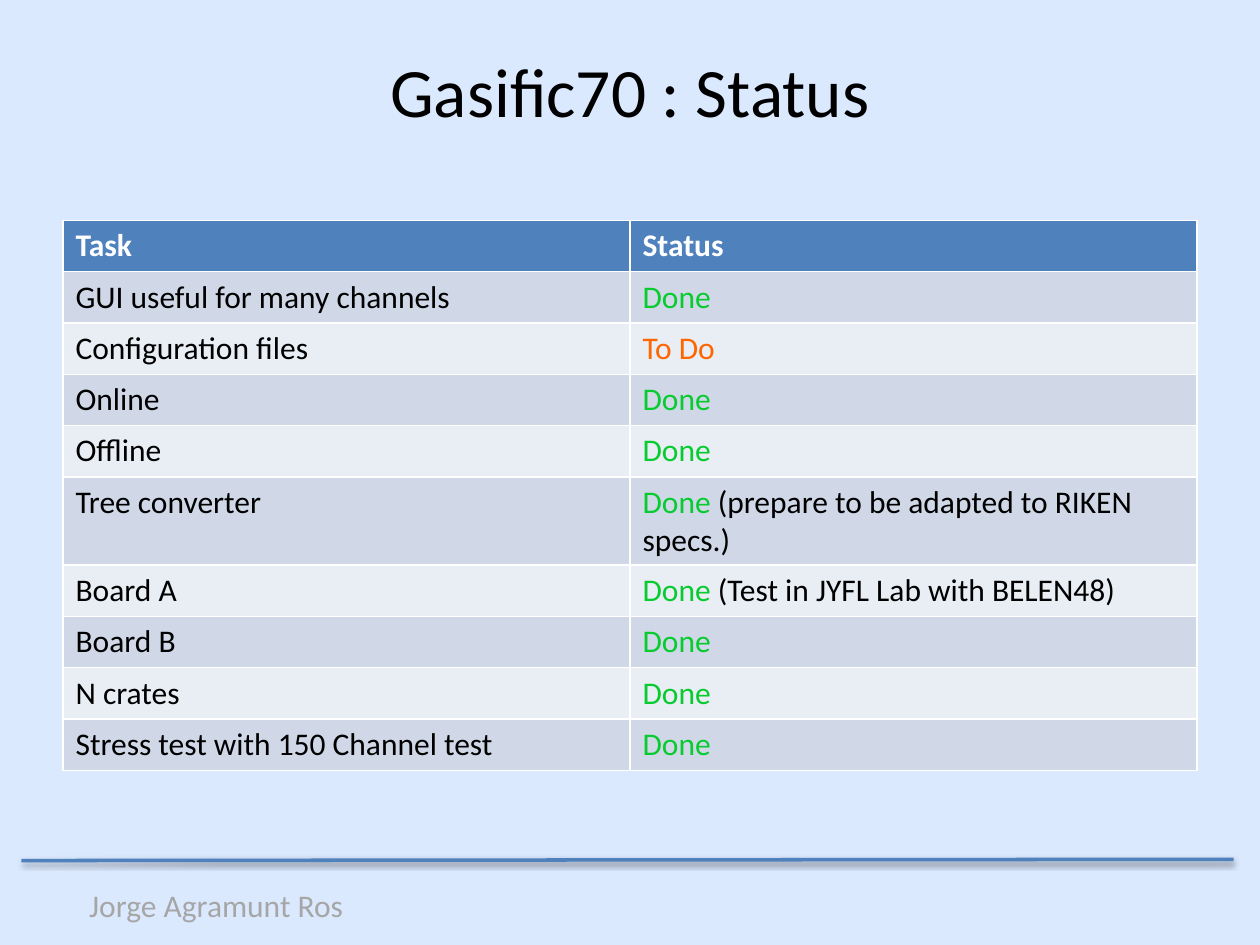
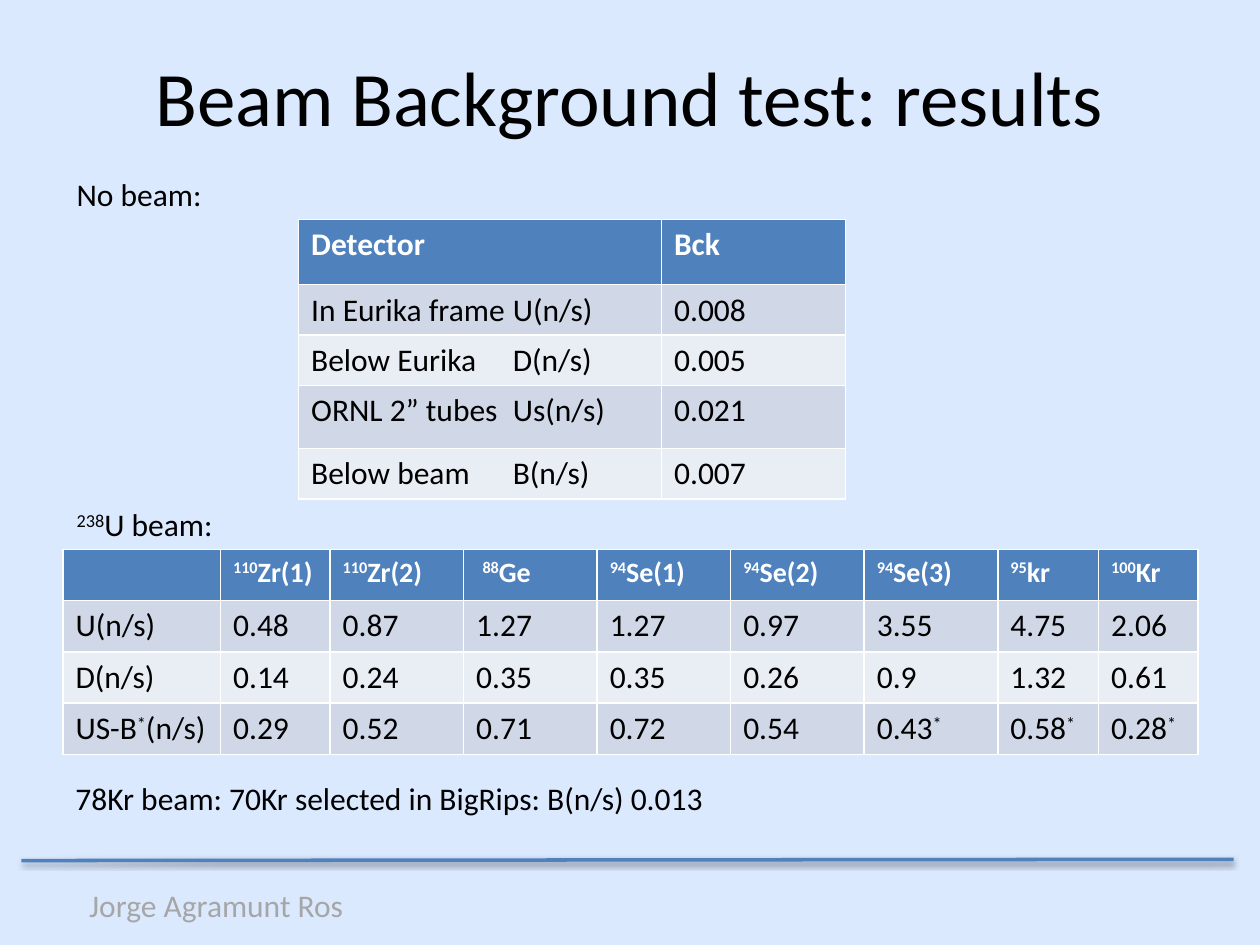
from lxml.etree import SubElement
from pptx import Presentation
from pptx.dml.color import RGBColor
from pptx.enum.shapes import MSO_CONNECTOR
from pptx.enum.text import MSO_ANCHOR, PP_ALIGN
from pptx.oxml.ns import qn
from pptx.util import Inches, Pt

WIDTH, HEIGHT = Inches(10), Inches(7.5)
FONT = "Calibri"
SKY = RGBColor(0xDB, 0xE9, 0xFF)
BLUE = RGBColor(0x4F, 0x81, 0xBD)
BANDS = RGBColor(0xE9, 0xED, 0xF4), RGBColor(0xD0, 0xD8, 0xE8)
BLACK = RGBColor(0, 0, 0)
WHITE = RGBColor(0xFF, 0xFF, 0xFF)
GREY = RGBColor(0xA6, 0xA6, 0xA6)
STATUS_COLOURS = {
    "Done": RGBColor(0x08, 0xCB, 0x30),
    "To Do": RGBColor(0xFF, 0x66, 0x00),
}

LEFT = 5
ROW = 5.43
LABEL_HEIGHT = 5.33
BODY_SIZE = 18

TASKS = [
    ("Task", "Status"),
    ("GUI useful for many channels", "Done"),
    ("Configuration files", "To Do"),
    ("Online", "Done"),
    ("Offline", "Done"),
    ("Tree converter", "Done| (prepare to be adapted to RIKEN specs.)"),
    ("Board A", "Done| (Test in JYFL Lab with BELEN48)"),
    ("Board B", "Done"),
    ("N crates", "Done"),
    ("Stress test with 150 Channel test", "Done"),
]
NO_BEAM = [
    ("Detector", "Bck"),
    ("In Eurika frame\tU(n/s)", "0.008"),
    ("Below Eurika\tD(n/s)", "0.005"),
    ("ORNL 2” tubes\tUs(n/s)", "0.021"),
    ("Below beam\tB(n/s)", "0.007"),
]
URANIUM_BEAM = [
    ("", "^110|Zr(1)", "^110|Zr(2)", " |^88|Ge", "^94|Se(1)", "^94|Se(2)",
     "^94|Se(3)", "^95|kr", "^100|Kr"),
    ("U(n/s)", "0.48", "0.87", "1.27", "1.27", "0.97", "3.55", "4.75", "2.06"),
    ("D(n/s)", "0.14", "0.24", "0.35", "0.35", "0.26", "0.9", "1.32", "0.61"),
    ("US-B|^*|(n/s)", "0.29", "0.52", "0.71", "0.72", "0.54", "0.43|^*",
     "0.58|^*", "0.28|^*"),
]


def across(percent):
    return round(WIDTH * percent / 100)


def down(percent):
    return round(HEIGHT * percent / 100)


def write_spans(para, text, size, colour, bold=False):
    """Write spans parted by |; a leading ^ raises a span, a status word is coloured."""
    for part in filter(None, text.split("|")):
        span = para.add_run()
        span.text = part.removeprefix("^")
        span.font.name = FONT
        span.font.size = Pt(size)
        span.font.bold = bold
        span.font.color.rgb = STATUS_COLOURS.get(part, colour)
        if part.startswith("^"):
            span.font._element.set("baseline", "30000")


def add_tab_stop(para, position):
    tabs = SubElement(para._p.get_or_add_pPr(), qn("a:tabLst"))
    SubElement(tabs, qn("a:tab"), pos=str(position), algn="l")


def add_label(page, text, left, top, width, colour=BLACK):
    box = page.shapes.add_textbox(across(left), down(top), across(width), down(LABEL_HEIGHT))
    box.text_frame.word_wrap = True
    write_spans(box.text_frame.paragraphs[0], text, BODY_SIZE, colour)


def add_footer(page):
    rule = page.shapes.add_connector(
        MSO_CONNECTOR.STRAIGHT, across(1.7), down(91.07), across(97.9), down(90.93))
    rule.line.color.rgb = BLUE
    rule.line.width = Pt(2)
    effects = SubElement(rule._element.spPr, qn("a:effectLst"))
    shadow = SubElement(effects, qn("a:outerShdw"), blurRad=str(Pt(3.1)),
                        dist=str(Pt(1.6)), dir="5400000", rotWithShape="0")
    black = SubElement(shadow, qn("a:srgbClr"), val=str(BLACK))
    SubElement(black, qn("a:alpha"), val="38000")
    add_label(page, "Jorge Agramunt Ros", 6.1, 93.07, 22.6, GREY)


def add_page(deck, title, size, height):
    page = deck.slides.add_slide(deck.slide_layouts[5])
    page.background.fill.solid()
    page.background.fill.fore_color.rgb = SKY
    add_footer(page)
    box = page.shapes.title
    box.left, box.top = across(LEFT), down(4)
    box.width, box.height = across(100 - 2 * LEFT), down(height)
    box.text_frame.vertical_anchor = MSO_ANCHOR.MIDDLE
    para = box.text_frame.paragraphs[0]
    para.alignment = PP_ALIGN.CENTER
    write_spans(para, title, size, BLACK)
    return page


def add_grid(page, rows, left, top, widths, heights, header_size=BODY_SIZE):
    """Add a banded table under a blue header row."""
    frame = page.shapes.add_table(len(rows), len(widths), across(left), down(top),
                                  across(sum(widths)), down(sum(heights)))
    table = frame.table
    for column, width in zip(table.columns, widths):
        column.width = across(width)
    for number, (row, height) in enumerate(zip(rows, heights)):
        table.rows[number].height = down(height)
        header = number == 0
        for place, text in enumerate(row):
            cell = table.cell(number, place)
            cell.fill.solid()
            cell.fill.fore_color.rgb = BLUE if header else BANDS[number % 2]
            para = cell.text_frame.paragraphs[0]
            if "\t" in text:
                add_tab_stop(para, across(16))
            write_spans(para, text, header_size if header else BODY_SIZE,
                        WHITE if header else BLACK, header)


def add_status_page(deck):
    page = add_page(deck, "Gasific70 : Status", 39.6, 11.07)
    add_grid(page, TASKS, LEFT, 23.33, [45, 45], [ROW] * len(TASKS))


def add_results_page(deck):
    page = add_page(deck, "Beam Background test: results", 44, 12.27)
    add_label(page, "No beam:", 5.1, 17.87, 12.2)
    add_grid(page, NO_BEAM, 23.7, 23.2, [28.8, 14.6],
             [6.93, LABEL_HEIGHT, LABEL_HEIGHT, 6.67, LABEL_HEIGHT])
    add_label(page, "^238|U beam:", 5.1, 52.8, 16.7)
    add_grid(page, URANIUM_BEAM, LEFT, 58.13, [12.5, 8.7] + [10.6] * 5 + [8, 7.9],
             [ROW] * len(URANIUM_BEAM), header_size=16)
    add_label(page, "78Kr beam: 70Kr selected in BigRips: B(n/s) 0.013", LEFT, 81.73, 52.5)


def main():
    deck = Presentation()
    deck.slide_width, deck.slide_height = WIDTH, HEIGHT
    add_status_page(deck)
    add_results_page(deck)
    deck.save("out.pptx")


if __name__ == "__main__":
    main()
